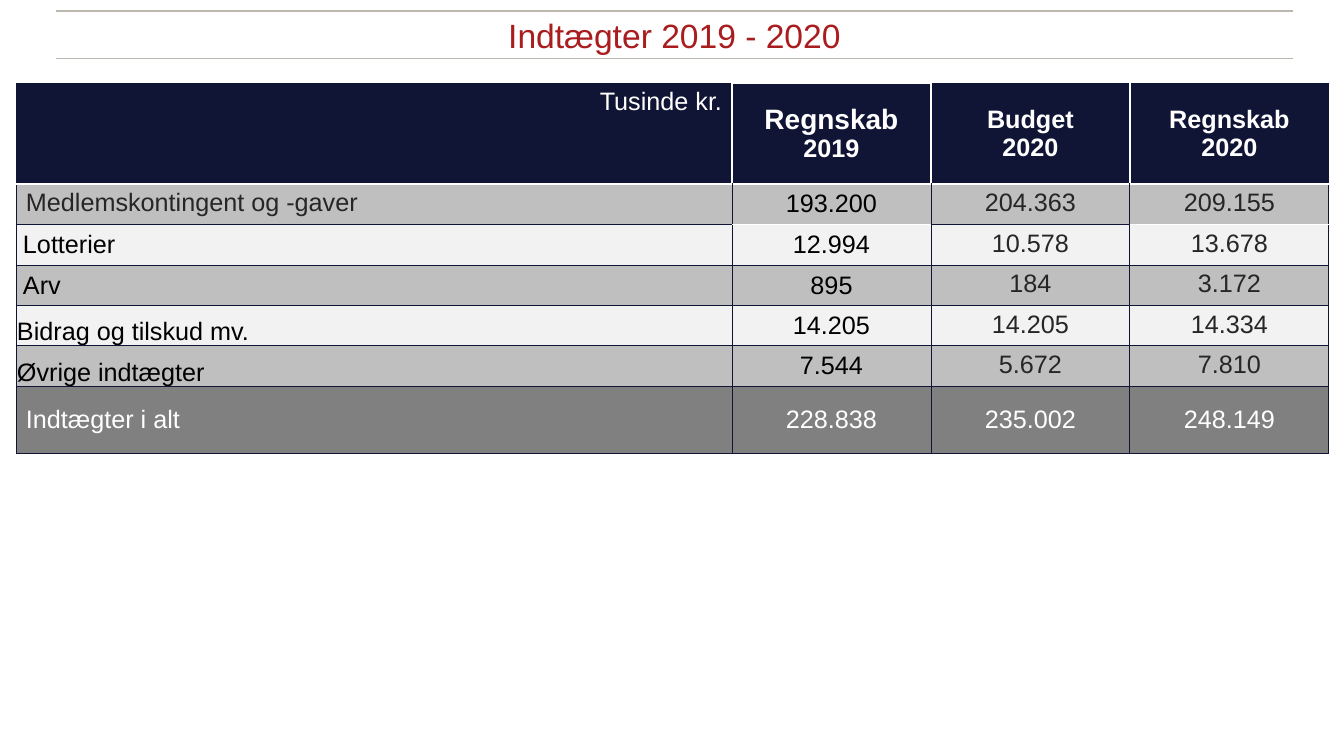
"""Builds the slide with the income table for 2019 and 2020."""
import lxml.etree
import pptx
import pptx.dml.color
import pptx.enum.shapes
import pptx.enum.text
import pptx.oxml.ns
import pptx.util

EMU_PER_PX = 914400 / 100.8
NAVY, WHITE, BLACK, CHARCOAL = "101435", "FFFFFF", "000000", "262626"
SILVER, PALE, GREY, HEADER_FILL = "BFBFBF", "F2F2F2", "808080", "111535"
RED, RULE_COLOUR = "A91D1E", "BCB8AF"
ALIGN = pptx.enum.text.PP_ALIGN
ANCHOR = pptx.enum.text.MSO_ANCHOR

COLUMN_WIDTHS = [716, 199, 199, 199]
ROW_HEIGHTS = [101, 40, 41, 40, 40, 41, 67]
ROW_FILLS = [HEADER_FILL, SILVER, PALE, SILVER, PALE, SILVER, GREY]
INCOME = [
    ["Tusinde kr.", "Regnskab\n2019", "Budget\n2020", "Regnskab\n2020"],
    ["Medlemskontingent og -gaver", "193.200", "204.363", "209.155"],
    ["Lotterier", "12.994", "10.578", "13.678"],
    ["Arv", "895", "184", "3.172"],
    ["Bidrag og tilskud mv.", "14.205", "14.205", "14.334"],
    ["Øvrige indtægter", "7.544", "5.672", "7.810"],
    ["Indtægter i alt", "228.838", "235.002", "248.149"],
]
LAST_ROW = len(INCOME) - 1
DEFAULT_INSETS = (10, 5, 10, 5)
LABEL_LAYOUT = {
    2: (ANCHOR.MIDDLE, (7, 5, 7, 5)),
    3: (ANCHOR.MIDDLE, (7, 5, 7, 5)),
    4: (ANCHOR.BOTTOM, (1, 1, 1, 0)),
    5: (ANCHOR.BOTTOM, (1, 1, 1, 0)),
    LAST_ROW: (ANCHOR.MIDDLE, DEFAULT_INSETS),
}


def px(length):
    """Turn pixels into EMU."""
    return pptx.util.Emu(round(length * EMU_PER_PX))


def rgb(colour):
    """Turn a hex string into a colour."""
    return pptx.dml.color.RGBColor.from_string(colour)


def style_paragraph(paragraph, align, size, colour, bold=False):
    """Align a paragraph and format its runs."""
    paragraph.alignment = align
    for run in paragraph.runs:
        run.font.name = "Arial"
        run.font.size = pptx.util.Pt(size)
        run.font.bold = bold
        run.font.color.rgb = rgb(colour)


def add_rule(slide, y):
    """Draw a thin horizontal rule across the title area."""
    straight = pptx.enum.shapes.MSO_CONNECTOR.STRAIGHT
    rule = slide.shapes.add_connector(straight, px(56), px(y), px(1293), px(y))
    rule.line.color.rgb = rgb(RULE_COLOUR)
    rule.line.width = pptx.util.Pt(0.75)
    lxml.etree.SubElement(rule._element.spPr, pptx.oxml.ns.qn("a:effectLst"))


def add_title(slide, wording):
    """Add the centred title."""
    frame = slide.shapes.add_textbox(px(56), px(9), px(1237), px(52)).text_frame
    frame.word_wrap = True
    frame.vertical_anchor = ANCHOR.MIDDLE
    frame.margin_left = frame.margin_right = px(6)
    frame.margin_top = frame.margin_bottom = px(6)
    frame.text = wording
    style_paragraph(frame.paragraphs[0], ALIGN.CENTER, 24, RED)


def horizontal_edge(boundary, column):
    """Give colour and width of the line above the row numbered boundary."""
    if boundary == 0 and column == 1:
        return WHITE, 1
    if boundary == 1:
        return WHITE, 1 if column in (1, 3) else 2
    if boundary == 2 and column in (1, 3):
        return WHITE, 1
    return NAVY, 0.75


def vertical_edge(row, boundary):
    """Give colour and width of the line left of the column numbered boundary."""
    inner = 0 < boundary < len(COLUMN_WIDTHS)
    return (WHITE, 1) if row == 0 and inner else (NAVY, 0.75)


def set_borders(cell, row, column):
    """Draw the four borders of a cell."""
    edges = {
        "a:lnL": vertical_edge(row, column),
        "a:lnR": vertical_edge(row, column + 1),
        "a:lnT": horizontal_edge(row, column),
        "a:lnB": horizontal_edge(row + 1, column),
    }
    properties = cell._tc.get_or_add_tcPr()
    for position, (tag, (colour, width)) in enumerate(edges.items()):
        line = lxml.etree.Element(pptx.oxml.ns.qn(tag), w=str(pptx.util.Pt(width)))
        fill = lxml.etree.SubElement(line, pptx.oxml.ns.qn("a:solidFill"))
        lxml.etree.SubElement(fill, pptx.oxml.ns.qn("a:srgbClr"), val=colour)
        properties.insert(position, line)


def cell_layout(row, column):
    """Give the anchor and insets of a cell."""
    if column == 0:
        return LABEL_LAYOUT.get(row, (ANCHOR.TOP, DEFAULT_INSETS))
    if row in (0, LAST_ROW):
        return ANCHOR.MIDDLE, DEFAULT_INSETS
    return (ANCHOR.MIDDLE if column == 1 else ANCHOR.TOP), (9, 5, 9, 5)


def text_colour(row, column):
    """Give the text colour of a cell."""
    if row in (0, LAST_ROW):
        return WHITE
    if column == 0:
        return CHARCOAL if row == 1 else BLACK
    return BLACK if column == 1 else CHARCOAL


def fill_cell(cell, row, column):
    """Write and format one cell of the income table."""
    cell.fill.solid()
    cell.fill.fore_color.rgb = rgb(ROW_FILLS[row])
    anchor, insets = cell_layout(row, column)
    cell.vertical_anchor = anchor
    cell.margin_left, cell.margin_top, cell.margin_right, cell.margin_bottom = map(px, insets)
    set_borders(cell, row, column)
    cell.text_frame.text = INCOME[row][column]
    align = ALIGN.CENTER
    if column == 0:
        align = ALIGN.RIGHT if row == 0 else ALIGN.LEFT
    for number, paragraph in enumerate(cell.text_frame.paragraphs):
        size = 20 if (row, column, number) == (0, 1, 0) else 18
        bold = row == 0 and column > 0
        style_paragraph(paragraph, align, size, text_colour(row, column), bold)


def add_income_table(slide):
    """Add the table of accounts and budget."""
    table = slide.shapes.add_table(
        len(ROW_HEIGHTS), len(COLUMN_WIDTHS), px(16), px(83),
        px(sum(COLUMN_WIDTHS)), px(sum(ROW_HEIGHTS))).table
    table.horz_banding = False
    for column, width in zip(table.columns, COLUMN_WIDTHS):
        column.width = px(width)
    for row, height in zip(table.rows, ROW_HEIGHTS):
        row.height = px(height)
    for row in range(len(ROW_HEIGHTS)):
        for column in range(len(COLUMN_WIDTHS)):
            fill_cell(table.cell(row, column), row, column)


def main():
    """Build and save the slide."""
    deck = pptx.Presentation()
    deck.slide_width, deck.slide_height = px(1344), px(756)
    slide = deck.slides.add_slide(deck.slide_layouts[6])
    for y in (59, 11):
        add_rule(slide, y)
    add_title(slide, "Indtægter 2019 - 2020")
    add_income_table(slide)
    deck.save("out.pptx")


if __name__ == "__main__":
    main()
